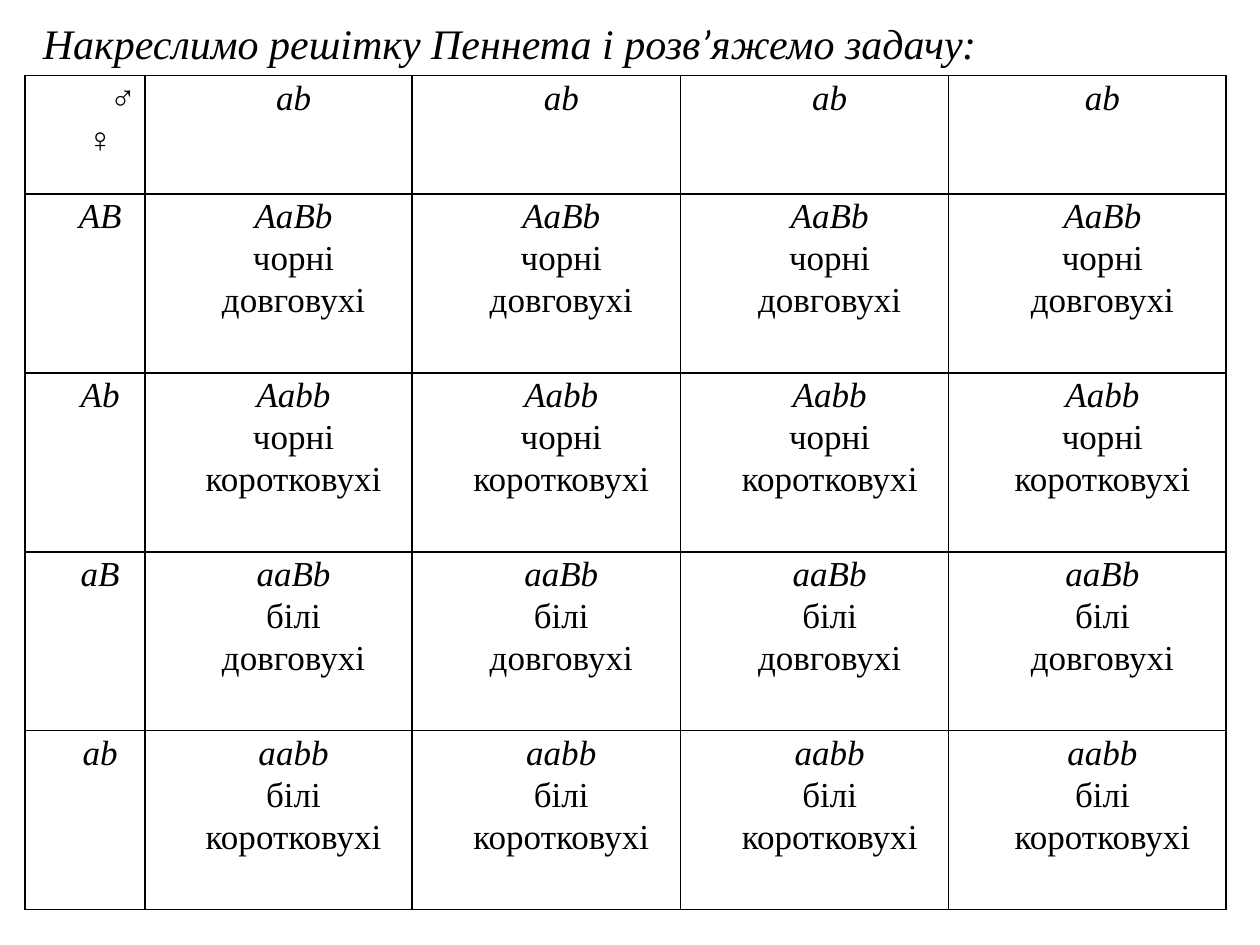
from dataclasses import dataclass

from lxml import etree
from pptx import Presentation
from pptx import util as u
from pptx.dml.color import RGBColor
from pptx.enum import text
from pptx.oxml.ns import qn


@dataclass(frozen=True)
class Theme:
    ink: str = "000000"
    paper: str = "FFFFFF"
    font: str = "Times New Roman"
    apostrophe_font: str = "Calibri"
    title_size: int = 24
    cell_size: int = 20
    line_spacing: int = 24
    border: int = 1


theme = Theme()
FIRST_LINE_INDENT = u.Inches(0.24)


def write_line(para, pieces, size, align, italic):
    """Fill a paragraph with (wording, font name) pieces."""
    para.alignment = align
    properties = para._p.get_or_add_pPr()
    for name, value in {"marL": 0, "indent": FIRST_LINE_INDENT}.items():
        properties.set(name, str(int(value)))
    for wording, font_name in pieces:
        span = para.add_run()
        span.text = wording
        look = {"name": font_name, "size": u.Pt(size), "bold": False, "italic": italic}
        for name, value in look.items():
            setattr(span.font, name, value)
        span.font.color.rgb = RGBColor.from_string(theme.ink)


def add_borders(cell):
    properties = cell._tc.get_or_add_tcPr()
    for position, side in enumerate(("lnL", "lnR", "lnT", "lnB")):
        line = etree.Element(qn(f"a:{side}"), w=str(int(u.Pt(theme.border))))
        fill = etree.SubElement(line, qn("a:solidFill"))
        etree.SubElement(fill, qn("a:srgbClr"), val=theme.ink)
        properties.insert(position, line)


deck = Presentation()
deck.slide_width, deck.slide_height = u.Inches(10), u.Inches(7.5)
page = deck.slides.add_slide(deck.slide_layouts.get_by_name("Title Only"))

# Title
title = page.shapes.title
title_place = {"left": 0, "top": 0.09, "width": 10, "height": 0.5}
for name, value in title_place.items():
    setattr(title, name, u.Inches(value))
title_format = {
    "word_wrap": True,
    "auto_size": text.MSO_AUTO_SIZE.NONE,
    "vertical_anchor": text.MSO_ANCHOR.MIDDLE,
}
for name, value in title_format.items():
    setattr(title.text_frame, name, value)
title_pieces = [
    ("Накреслимо решітку Пеннета і розв", theme.font),
    ("’", theme.apostrophe_font),
    ("яжемо задачу:", theme.font),
]
write_line(title.text_frame.paragraphs[0], title_pieces, theme.title_size,
           text.PP_ALIGN.JUSTIFY, True)

# Punnett square: every cross is with the gamete ab
CENTER, RIGHT = text.PP_ALIGN.CENTER, text.PP_ALIGN.RIGHT
male_gametes = ["ab"] * 4
female_gametes = ["AB", "Ab", "aB", "ab"]

# Each cell is a list of lines: (wording, alignment, italic)
corner = [("♂", RIGHT, False), ("♀", CENTER, False)]
grid = [[corner] + [[(gamete, CENTER, True)] for gamete in male_gametes]]
for female in female_gametes:
    row = [[(female, CENTER, True)]]
    coat = "чорні" if "A" in female else "білі"
    ears = "довговухі" if "B" in female else "коротковухі"
    for male in male_gametes:
        genotype = female[0] + male[0] + female[1] + male[1]
        row.append([(genotype, CENTER, True), (coat, CENTER, False), (ears, CENTER, False)])
    grid.append(row)

column_widths = [0.95, 2.12, 2.13, 2.13, 2.2]
row_heights = [0.94] + [1.42] * len(female_gametes)
frame = page.shapes.add_table(
    len(row_heights), len(column_widths), u.Inches(0.2), u.Inches(0.6),
    u.Inches(sum(column_widths)), u.Inches(sum(row_heights)))
square = frame.table
square.first_row = square.horz_banding = False
for column, width in zip(square.columns, column_widths):
    column.width = u.Inches(width)
for row, height in zip(square.rows, row_heights):
    row.height = u.Inches(height)

margins = {"margin_left": 0.07, "margin_right": 0.07, "margin_top": 0, "margin_bottom": 0}
for row_index, row in enumerate(grid):
    for column_index, lines in enumerate(row):
        cell = square.cell(row_index, column_index)
        for name, value in margins.items():
            setattr(cell, name, u.Inches(value))
        cell.fill.solid()
        cell.fill.fore_color.rgb = RGBColor.from_string(theme.paper)
        add_borders(cell)
        for line_index, (wording, align, italic) in enumerate(lines):
            box = cell.text_frame
            para = box.add_paragraph() if line_index else box.paragraphs[0]
            para.line_spacing = u.Pt(theme.line_spacing)
            write_line(para, [(wording, theme.font)], theme.cell_size, align, italic)

deck.save("out.pptx")
